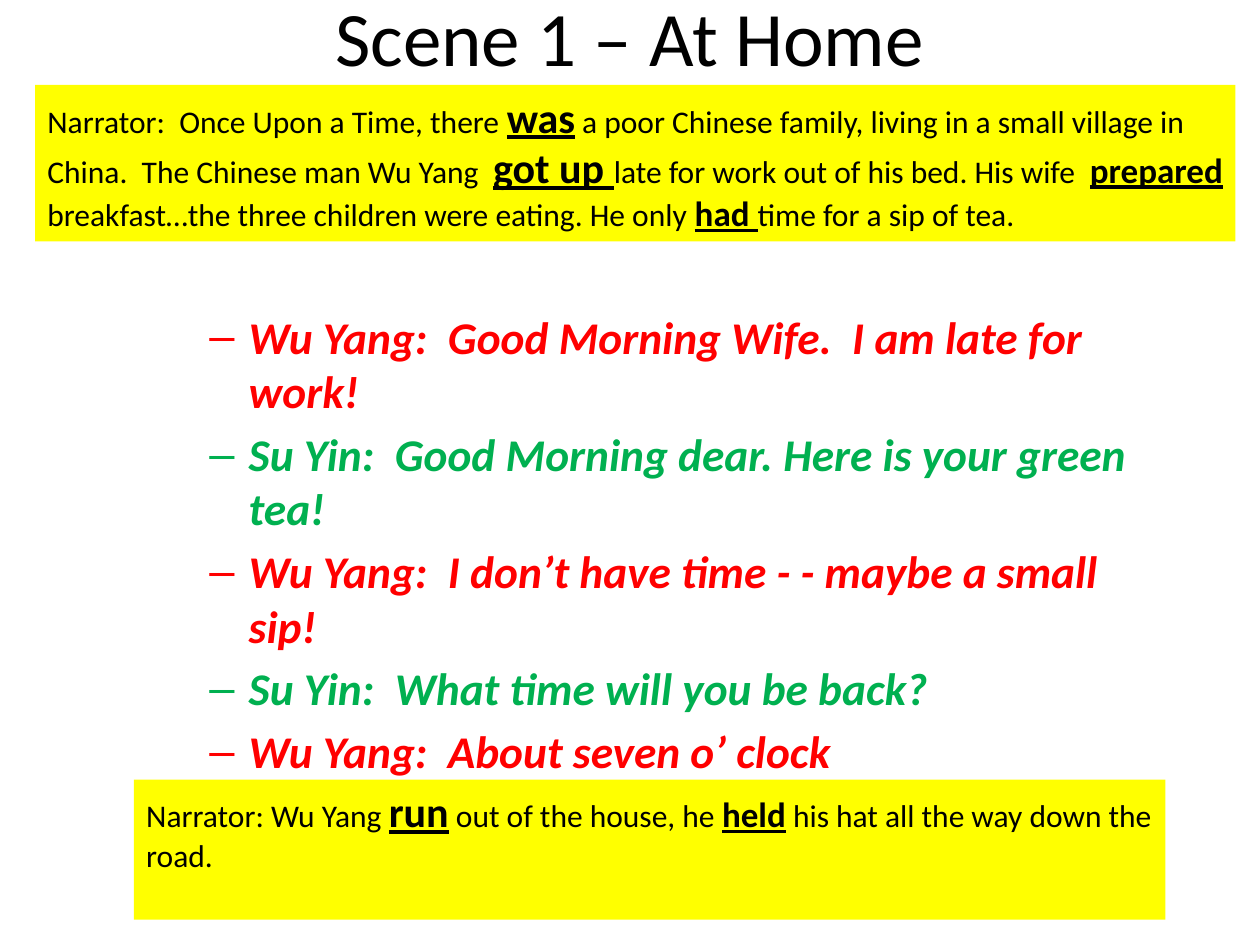
import pptx
import pptx.dml.color
import pptx.enum.shapes
import pptx.enum.text
import pptx.oxml
import pptx.oxml.ns
import pptx.util

Pt = pptx.util.Pt
BLACK, RED, GREEN, YELLOW = "000000", "FF0000", "00B050", "FFFF00"


def paint(target, color):
    if hasattr(target, "solid"):
        target.solid()
        target = target.fore_color
    target.rgb = pptx.dml.color.RGBColor.from_string(color)


def write(paragraph, text, size=18, color=BLACK, bold=False, italic=False, underline=False):
    run = paragraph.add_run()
    run.text = text
    font = run.font
    font.name = "Calibri"
    font.size = Pt(size)
    font.bold, font.italic, font.underline = bold, italic, underline
    paint(font.color, color)


class ScenePage:
    def __init__(self, slide):
        self.shapes = slide.shapes

    def text_frame(self, bounds):
        frame = self.shapes.add_textbox(*map(Pt, bounds)).text_frame
        frame.word_wrap = True
        return frame

    def title(self, text, bounds):
        frame = self.text_frame(bounds)
        frame.vertical_anchor = pptx.enum.text.MSO_ANCHOR.MIDDLE
        heading = frame.paragraphs[0]
        heading.alignment = pptx.enum.text.PP_ALIGN.CENTER
        write(heading, text, size=44)

    def dialogue(self, lines, bounds):
        frame = self.text_frame(bounds)
        for index, (speech, color) in enumerate(lines):
            line = frame.add_paragraph() if index else frame.paragraphs[0]
            properties = line._p.get_or_add_pPr()
            properties.set("marL", str(Pt(58.5)))
            properties.set("indent", str(Pt(-22.5)))
            for tag, name, value in (("buFont", "typeface", "Arial"), ("buChar", "char", "–")):
                bullet = pptx.oxml.parse_xml(f"<a:{tag} {pptx.oxml.ns.nsdecls('a')}/>")
                bullet.set(name, value)
                properties.append(bullet)
            if index:
                line.space_before = Pt(4.8)
            write(line, speech, size=25.9, color=color, bold=True, italic=True)

    def narration(self, parts, bounds):
        panel = self.shapes.add_shape(pptx.enum.shapes.MSO_SHAPE.RECTANGLE, *map(Pt, bounds))
        panel.shadow.inherit = False
        paint(panel.fill, YELLOW)
        panel.line.fill.background()
        frame = panel.text_frame
        frame.word_wrap = True
        frame.vertical_anchor = pptx.enum.text.MSO_ANCHOR.TOP
        narrator = frame.paragraphs[0]
        narrator.alignment = pptx.enum.text.PP_ALIGN.LEFT
        for text, size in parts:
            verb = size > 18
            write(narrator, text, size=size, bold=verb, underline=verb)


def main():
    deck = pptx.Presentation()
    deck.slide_width, deck.slide_height = Pt(720), Pt(540)
    page = ScenePage(deck.slides.add_slide(deck.slide_layouts[6]))

    page.title("Scene 1 – At Home", (36, -24.5, 648, 90))
    page.dialogue([
        ("Wu Yang:  Good Morning Wife.  I am late for work!", RED),
        ("Su Yin:  Good Morning dear. Here is your green tea!", GREEN),
        ("Wu Yang:  I don’t have time - - maybe a small sip!", RED),
        ("Su Yin:  What time will you be back?", GREEN),
        ("Wu Yang:  About seven o’ clock", RED),
    ], (76.5, 173, 602, 266.5))
    page.narration([
        ("Narrator: Wu Yang ", 18),
        ("run", 24),
        (" out of the house, he ", 18),
        ("held", 20),
        (" his hat all the way down the road.", 18),
    ], (76.5, 445.5, 589.5, 80))
    page.narration([
        ("Narrator:  Once Upon a Time, there ", 18),
        ("was", 24),
        (" a poor Chinese family, living in a small village in China.  The Chinese man Wu Yang  ", 18),
        ("got up ", 24),
        ("late for work out of his bed. His wife  ", 18),
        ("prepared", 20),
        (" breakfast…the three children were eating. He only ", 18),
        ("had ", 20),
        ("time for a sip of tea.", 18),
    ], (20, 48.5, 686, 89.5))

    deck.save("out.pptx")


if __name__ == "__main__":
    main()
